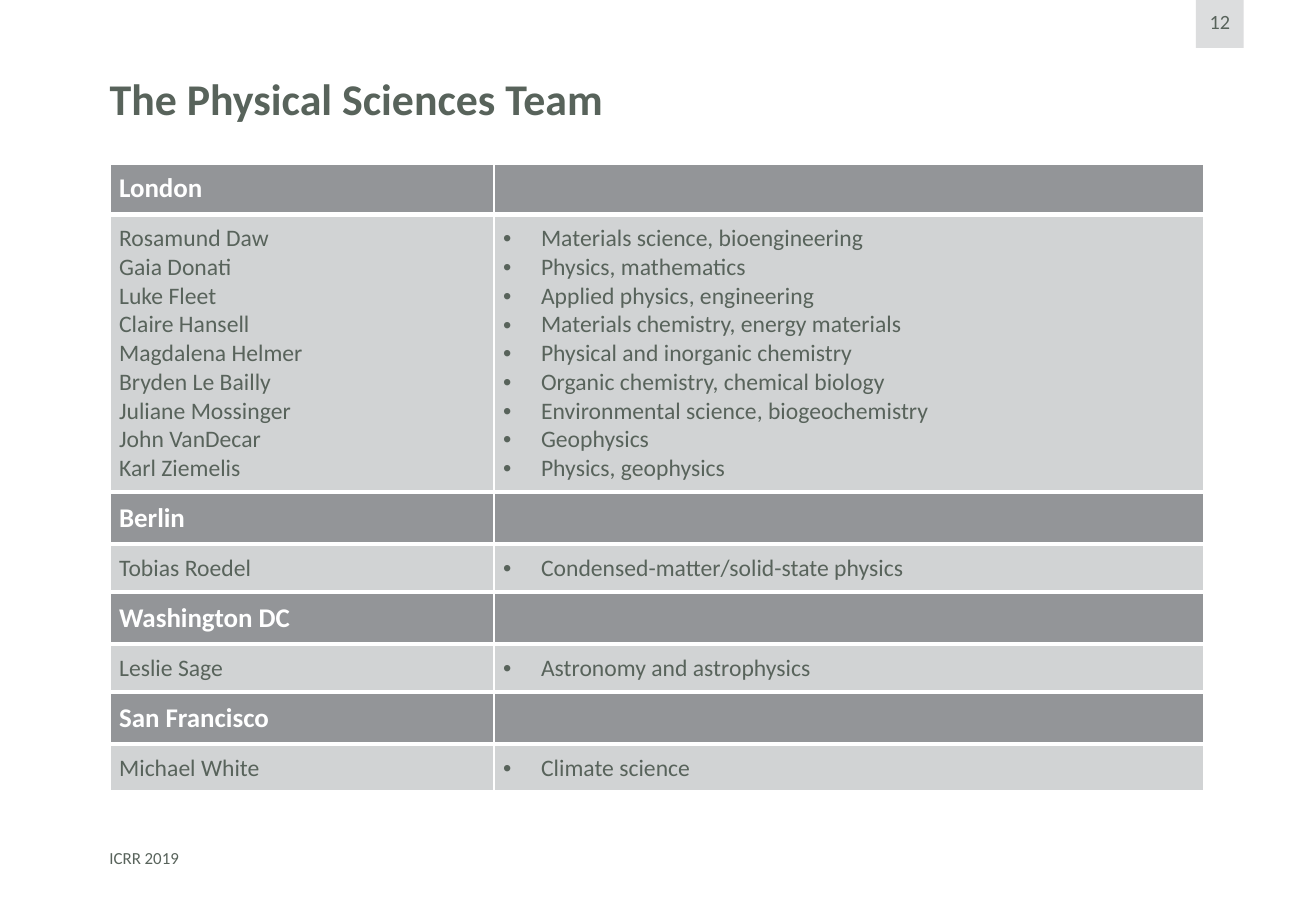
"""Build the slide listing the Physical Sciences Team by office."""
from dataclasses import dataclass

from lxml.etree import SubElement
from pptx import Presentation
from pptx.dml.color import RGBColor
from pptx.enum.text import MSO_ANCHOR as Anchor, MSO_AUTO_SIZE as AutoSize, PP_ALIGN as Align
from pptx.oxml.ns import qn
from pptx.slide import Slide
from pptx.table import _Cell as Cell
from pptx.text.text import TextFrame, _Paragraph as Paragraph
from pptx.util import Cm, Pt

COLOURS = {"text": "58635B", "white": "FFFFFF", "office": "939598", "staff": "D1D3D4", "tab": "DCDDDE"}
FONT = "Calibri"
LEFT, WIDTH = 2.29, 22.89
NAME_WIDTH = 8.03
OFFICE_HEIGHT, LINE_HEIGHT, CELL_MARGIN = 1.09, 0.6, 0.2
BORDERS = {"lnL": 1.5, "lnR": 1.5, "lnT": 3, "lnB": 3}


@dataclass
class Editor:
    """An editor and the subjects covered."""
    name: str
    subjects: str


@dataclass
class Office:
    """A city and the editors based there."""
    city: str
    editors: list[Editor]

    def staff_height(self) -> float:
        """Return the height in centimetres of the row of editors."""
        return len(self.editors) * LINE_HEIGHT + 2 * CELL_MARGIN


OFFICES = [
    Office("London", [
        Editor("Rosamund Daw", "Materials science, bioengineering"),
        Editor("Gaia Donati", "Physics, mathematics"),
        Editor("Luke Fleet", "Applied physics, engineering"),
        Editor("Claire Hansell", "Materials chemistry, energy materials"),
        Editor("Magdalena Helmer", "Physical and inorganic chemistry"),
        Editor("Bryden Le Bailly", "Organic chemistry, chemical biology"),
        Editor("Juliane Mossinger", "Environmental science, biogeochemistry"),
        Editor("John VanDecar", "Geophysics"),
        Editor("Karl Ziemelis", "Physics, geophysics"),
    ]),
    Office("Berlin", [Editor("Tobias Roedel", "Condensed-matter/solid-state physics")]),
    Office("Washington DC", [Editor("Leslie Sage", "Astronomy and astrophysics")]),
    Office("San Francisco", [Editor("Michael White", "Climate science")]),
]


def rgb(colour: str) -> RGBColor:
    """Return the named colour."""
    return RGBColor.from_string(COLOURS[colour])


def format_runs(frame: TextFrame, size: float, colour: str = "text", bold: bool = False) -> None:
    """Format every run of a text frame."""
    for paragraph in frame.paragraphs:
        for run in paragraph.runs:
            run.font.name, run.font.size, run.font.bold = FONT, Pt(size), bold
            run.font.color.rgb = rgb(colour)


def clear_margins(frame: TextFrame) -> None:
    """Remove the inner margins of a text frame."""
    frame.margin_left = frame.margin_right = frame.margin_top = frame.margin_bottom = 0


def add_bullet(paragraph: Paragraph) -> None:
    """Give a paragraph a hanging bullet."""
    properties = paragraph._p.get_or_add_pPr()
    properties.set("marL", str(Cm(0.79)))
    properties.set("indent", str(-Cm(0.79)))
    colour = SubElement(properties, qn("a:buClr"))
    SubElement(colour, qn("a:srgbClr"), val=COLOURS["text"])
    SubElement(properties, qn("a:buFont"), typeface="Arial")
    SubElement(properties, qn("a:buChar"), char="•")


def style_cell(cell: Cell, fill: str) -> None:
    """Set the white borders and the fill of a cell."""
    properties = cell._tc.get_or_add_tcPr()
    for side, width in BORDERS.items():
        line = SubElement(properties, qn(f"a:{side}"), w=str(Pt(width)))
        solid = SubElement(line, qn("a:solidFill"))
        SubElement(solid, qn("a:srgbClr"), val=COLOURS["white"])
    cell.fill.solid()
    cell.fill.fore_color.rgb = rgb(fill)


def fill_cell(cell: Cell, text: str, size: float, colour: str, bold: bool = False) -> None:
    """Write formatted text into a cell."""
    cell.margin_left = cell.margin_right = cell.margin_top = cell.margin_bottom = Cm(CELL_MARGIN)
    cell.vertical_anchor = Anchor.BOTTOM
    cell.text_frame.text = text
    format_runs(cell.text_frame, size, colour, bold)


def add_team_table(slide: Slide) -> None:
    """Add the table with a heading row and a staff row for each office."""
    heights = [height for office in OFFICES for height in (OFFICE_HEIGHT, office.staff_height())]
    team = slide.shapes.add_table(len(heights), 2, Cm(LEFT), Cm(3.4), Cm(WIDTH), Cm(sum(heights))).table
    team.first_row = team.horz_banding = False
    team.columns[0].width, team.columns[1].width = Cm(NAME_WIDTH), Cm(WIDTH - NAME_WIDTH)
    for index, height in enumerate(heights):
        team.rows[index].height = Cm(height)
        for cell in team.rows[index].cells:
            style_cell(cell, "staff" if index % 2 else "office")
    for index, office in enumerate(OFFICES):
        fill_cell(team.cell(2 * index, 0), office.city, 16, "white", True)
        names, subjects = team.rows[2 * index + 1].cells
        fill_cell(names, "\n".join(editor.name for editor in office.editors), 14, "text")
        fill_cell(subjects, "\n".join(editor.subjects for editor in office.editors), 14, "text")
        for paragraph in subjects.text_frame.paragraphs:
            add_bullet(paragraph)


def add_page_tab(slide: Slide) -> None:
    """Add the slanted tab with the page number."""
    outline = slide.shapes.build_freeform(25.17, 0, scale=float(Cm(1)))
    outline.add_line_segments([(26.14, 0), (26.14, 1.12), (25.27, 1.35), (25.2, 1.33), (25.17, 1.27)])
    tab = outline.convert_to_shape()
    tab.shadow.inherit = False
    tab.fill.solid()
    tab.fill.fore_color.rgb = rgb("tab")
    tab.line.fill.background()
    number = tab.text_frame
    clear_margins(number)
    number.margin_bottom = Cm(0.1)
    number.word_wrap = False
    number.vertical_anchor = Anchor.MIDDLE
    number.text = "12"
    number.paragraphs[0].alignment = Align.CENTER
    format_runs(number, 12)


def add_title(slide: Slide) -> None:
    """Place and format the title."""
    title = slide.shapes.title
    title.left, title.top, title.width, title.height = Cm(LEFT), Cm(1.5), Cm(WIDTH), Cm(1.12)
    heading = title.text_frame
    clear_margins(heading)
    heading.auto_size = AutoSize.NONE
    heading.word_wrap = True
    heading.vertical_anchor = Anchor.TOP
    heading.text = "The Physical Sciences Team"
    heading.paragraphs[0].alignment = Align.LEFT
    format_runs(heading, 26, bold=True)


def add_event(slide: Slide) -> None:
    """Add the event name at the foot of the slide."""
    event = slide.shapes.add_textbox(Cm(LEFT), Cm(17.73), Cm(1.47), Cm(0.43)).text_frame
    clear_margins(event)
    event.word_wrap = False
    event.text = "ICRR 2019"
    format_runs(event, 10)


def main() -> None:
    """Build and save the presentation."""
    presentation = Presentation()
    presentation.slide_width, presentation.slide_height = Cm(27.51), Cm(19.05)
    slide = presentation.slides.add_slide(presentation.slide_layouts[5])
    add_page_tab(slide)
    add_event(slide)
    add_title(slide)
    add_team_table(slide)
    presentation.save("out.pptx")


if __name__ == "__main__":
    main()
